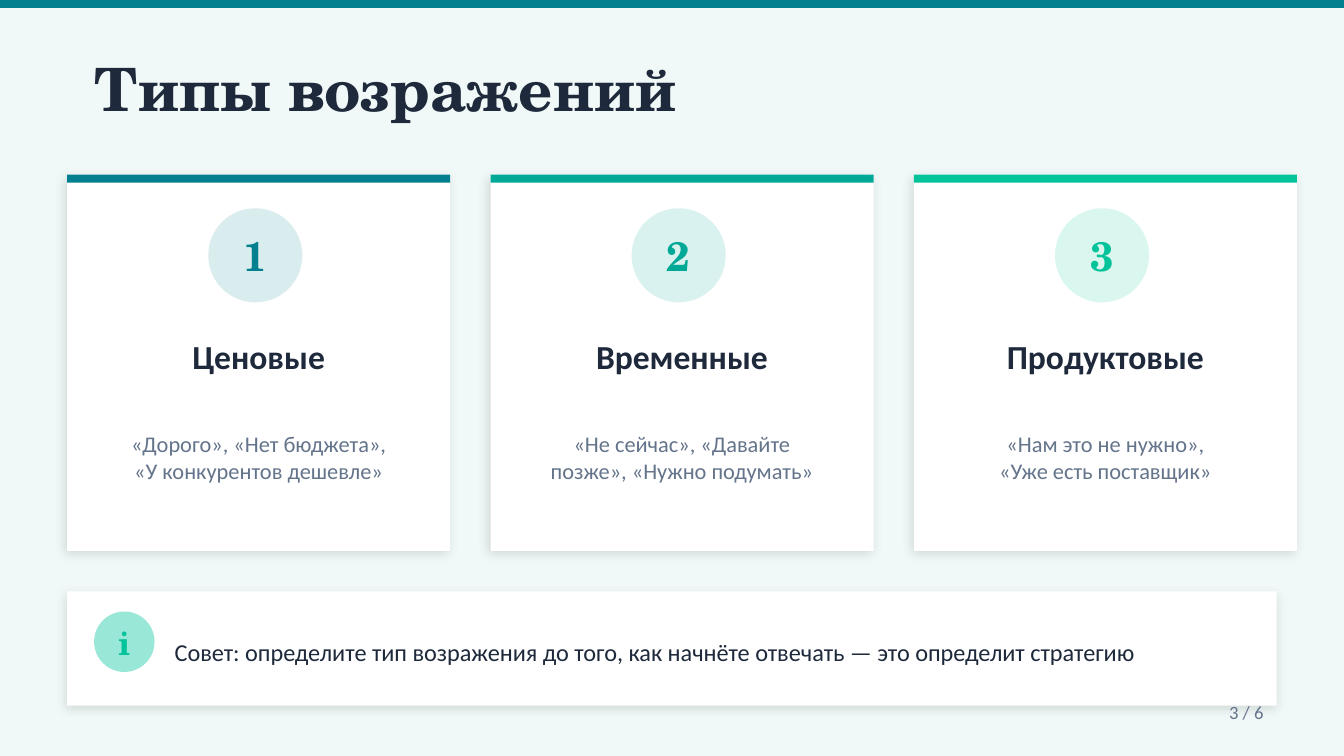
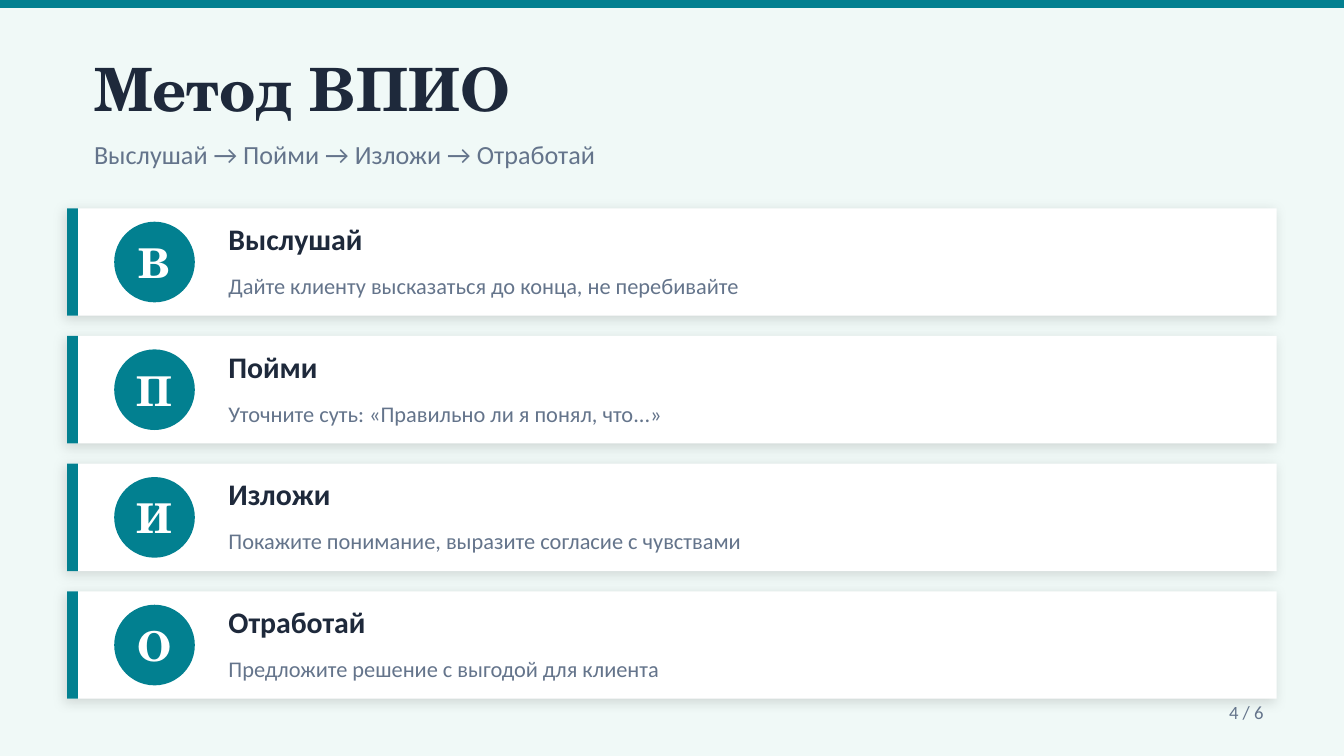
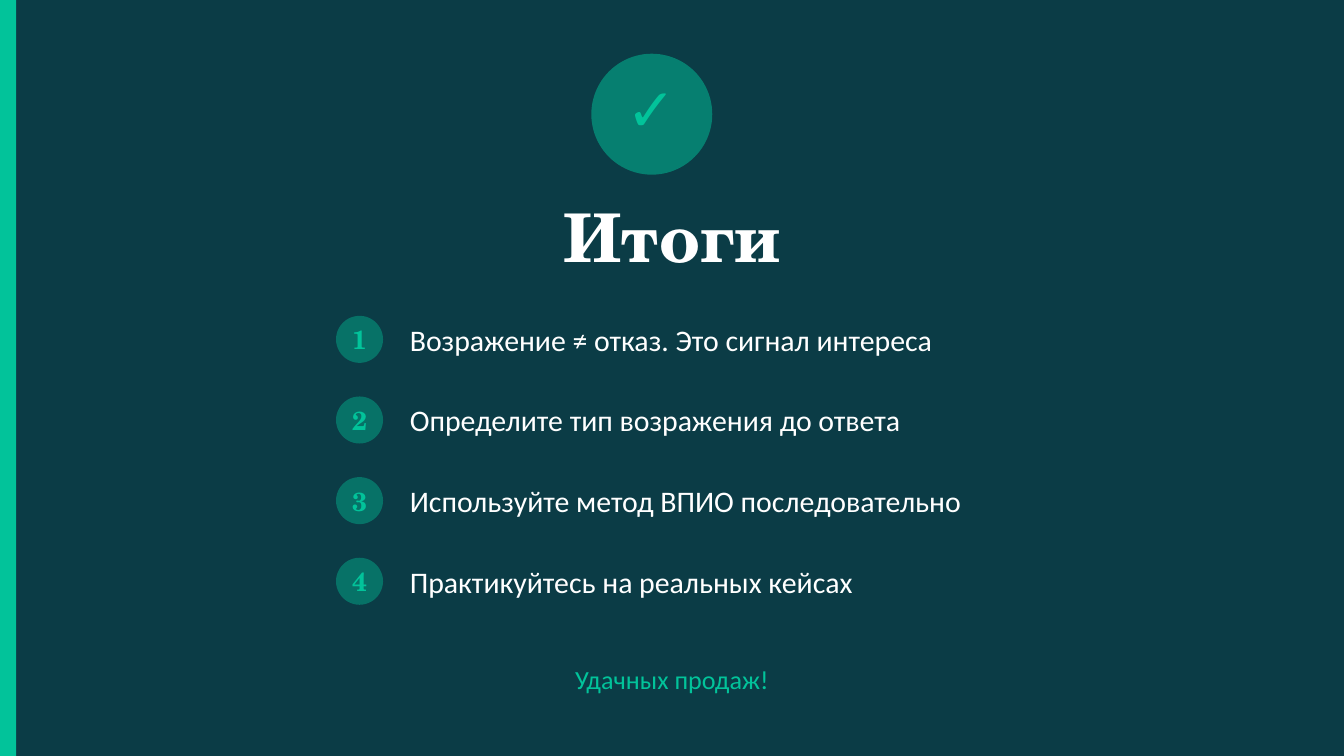
import pptx
import pptx.dml.color
import pptx.enum.shapes
import pptx.enum.text
import pptx.oxml
import pptx.oxml.ns
import pptx.util

RGBColor = pptx.dml.color.RGBColor
Kind = pptx.enum.shapes.MSO_SHAPE
Align = pptx.enum.text.PP_ALIGN
Inches = pptx.util.Inches

# Content
TOTAL_PAGES = 6
TYPES_TITLE = "Типы возражений"
TIP = "Совет: определите тип возражения до того, как начнёте отвечать — это определит стратегию"
METHOD_TITLE = "Метод ВПИО"
METHOD_SUBTITLE = "Выслушай → Пойми → Изложи → Отработай"
METHOD_STEPS = [
    ("Выслушай", "Дайте клиенту высказаться до конца, не перебивайте"),
    ("Пойми", "Уточните суть: «Правильно ли я понял, что...»"),
    ("Изложи", "Покажите понимание, выразите согласие с чувствами"),
    ("Отработай", "Предложите решение с выгодой для клиента"),
]
SUMMARY_TITLE = "Итоги"
SUMMARY_POINTS = [
    "Возражение ≠ отказ. Это сигнал интереса",
    "Определите тип возражения до ответа",
    "Используйте метод ВПИО последовательно",
    "Практикуйтесь на реальных кейсах",
]
FAREWELL = "Удачных продаж!"

# Shared style
TEAL = RGBColor(0x02, 0x80, 0x90)
SEA = RGBColor(0x00, 0xA8, 0x96)
MINT = RGBColor(0x02, 0xC3, 0x9A)
INK = RGBColor(0x1E, 0x29, 0x3B)
SLATE = RGBColor(0x64, 0x74, 0x8B)
WHITE = RGBColor(0xFF, 0xFF, 0xFF)
PALE = RGBColor(0xF0, 0xF9, 0xF7)
NIGHT = RGBColor(0x0F, 0x20, 0x27)
SERIF = "TeX Gyre Schola"
SANS = "Calibri"

OBJECTION_TYPES = [
    ("Ценовые", ["«Дорого», «Нет бюджета»,", "«У конкурентов дешевле»"], TEAL),
    ("Временные", ["«Не сейчас», «Давайте", "позже», «Нужно подумать»"], SEA),
    ("Продуктовые", ["«Нам это не нужно»,", "«Уже есть поставщик»"], MINT),
]

# Layout, in inches
WIDTH = 10
HEIGHT = WIDTH * 9 / 16
MARGIN = 0.5
PAD = 0.2
CONTENT_WIDTH = WIDTH - 2 * MARGIN
BAND = 0.06


def add_text(slide, text, left, top, width, height, *, size, color=INK, font=SANS,
             bold=False, align=None, inset=(0, 0)):
    """Add a vertically centred text box; a list gives one paragraph per item."""
    box = slide.shapes.add_textbox(*map(Inches, (left, top, width, height)))
    frame = box.text_frame
    frame.word_wrap = True
    frame.vertical_anchor = pptx.enum.text.MSO_ANCHOR.MIDDLE
    frame.margin_left = frame.margin_right = Inches(inset[0])
    frame.margin_top = frame.margin_bottom = Inches(inset[1])
    lines = [text] if isinstance(text, str) else text
    for index, line in enumerate(lines):
        paragraph = frame.paragraphs[0] if index == 0 else frame.add_paragraph()
        paragraph.alignment = align
        run = paragraph.add_run()
        run.text = line
        run.font.size = pptx.util.Pt(size)
        run.font.name = font
        run.font.bold = bold
        run.font.color.rgb = color


def add_block(slide, left, top, width, height, color, kind=Kind.RECTANGLE, opacity=100):
    block = slide.shapes.add_shape(kind, *map(Inches, (left, top, width, height)))
    block.shadow.inherit = False
    block.line.fill.background()
    block.fill.solid()
    block.fill.fore_color.rgb = color
    if opacity < 100:
        solid = block._element.spPr.find(pptx.oxml.ns.qn("a:solidFill"))
        solid[0].append(pptx.oxml.parse_xml(
            f'<a:alpha {pptx.oxml.ns.nsdecls("a")} val="{opacity * 1000}"/>'))
    return block


def add_card(slide, left, top, width, height):
    """Add a white panel with a soft shadow."""
    card = add_block(slide, left, top, width, height, WHITE)
    effects = card._element.spPr.find(pptx.oxml.ns.qn("a:effectLst"))
    effects.append(pptx.oxml.parse_xml(
        f'<a:outerShdw {pptx.oxml.ns.nsdecls("a")} blurRad="{pptx.util.Pt(6)}" '
        f'dist="{pptx.util.Pt(2)}" dir="{135 * 60000}" algn="bl" rotWithShape="0">'
        '<a:srgbClr val="000000"><a:alpha val="12000"/></a:srgbClr></a:outerShdw>'))


def add_badge(slide, symbol, left, top, diameter, size, fill, color, opacity=100, lift=0):
    """Add a disc with a symbol, raised by lift, in its middle."""
    add_block(slide, left, top, diameter, diameter, fill, Kind.OVAL, opacity)
    add_text(slide, symbol, left, top - lift, diameter, diameter, size=size,
             color=color, font=SERIF, bold=True, align=Align.CENTER)


def new_slide(deck, background):
    slide = deck.slides.add_slide(deck.slide_layouts[6])
    slide.background.fill.solid()
    slide.background.fill.fore_color.rgb = background
    return slide


def new_content_slide(deck, title, title_width):
    slide = new_slide(deck, PALE)
    add_block(slide, 0, 0, WIDTH, BAND, TEAL)
    add_text(slide, title, MARGIN + PAD, 0.3, title_width, 0.7,
             size=32, font=SERIF, bold=True)
    return slide


def add_page_number(slide, page):
    add_text(slide, f"{page} / {TOTAL_PAGES}", WIDTH - MARGIN - 1, 5.15, 1, 0.3,
             size=10, color=SLATE, align=Align.RIGHT, inset=(0.1, 0.05))


def build_types(deck):
    slide = new_content_slide(deck, TYPES_TITLE, 8)
    top, width, height, gap, disc = 1.3, 2.85, 2.8, 0.3, 0.7
    for index, (name, examples, accent) in enumerate(OBJECTION_TYPES):
        left = MARGIN + index * (width + gap)
        text_left, text_width = left + PAD, width - 2 * PAD
        add_card(slide, left, top, width, height)
        add_block(slide, left, top, width, BAND, accent)
        add_badge(slide, str(index + 1), left + 1.05, top + 0.25, disc, 22,
                  accent, accent, opacity=15)
        add_text(slide, name, text_left, top + 1.1, text_width, 0.5,
                 size=18, bold=True, align=Align.CENTER)
        add_text(slide, examples, text_left, top + 1.6, text_width, 1,
                 size=12, color=SLATE, align=Align.CENTER)

    tip_top = top + height + gap
    add_card(slide, MARGIN, tip_top, CONTENT_WIDTH, 0.85)
    add_badge(slide, "i", MARGIN + PAD, tip_top + 0.15, 0.45, 18, MINT, MINT, opacity=40)
    add_text(slide, TIP, MARGIN + 0.8, tip_top + 0.05, 7.8, 0.8, size=13)
    add_page_number(slide, 3)


def build_method(deck):
    slide = new_content_slide(deck, METHOD_TITLE, 5)
    add_text(slide, METHOD_SUBTITLE, MARGIN + PAD, 0.95, 8, 0.4, size=14, color=SLATE)
    first_top, height, gap, line_height = 1.55, 0.8, 0.15, 0.35
    text_left = MARGIN + 1.2
    for index, (step, advice) in enumerate(METHOD_STEPS):
        top = first_top + index * (height + gap)
        add_card(slide, MARGIN, top, CONTENT_WIDTH, height)
        add_block(slide, MARGIN, top, 0.08, height, TEAL)
        add_badge(slide, step[0], MARGIN + 0.35, top + 0.1, 0.6, 22, TEAL, WHITE)
        add_text(slide, step, text_left, top + 0.05, 3, line_height, size=16, bold=True)
        add_text(slide, advice, text_left, top + 0.05 + line_height, 7.5, line_height,
                 size=12, color=SLATE)
    add_page_number(slide, 4)


def build_summary(deck):
    slide = new_slide(deck, NIGHT)
    add_block(slide, 0, 0, WIDTH, HEIGHT, TEAL, opacity=30)
    add_block(slide, 0, 0, 0.12, HEIGHT, MINT)
    add_badge(slide, "✓", 4.4, 0.4, 0.9, 32, MINT, MINT, opacity=50, lift=0.05)
    add_text(slide, SUMMARY_TITLE, 1, 1.4, WIDTH - 2, 0.7, size=36, color=WHITE,
             font=SERIF, bold=True, align=Align.CENTER)
    for index, point in enumerate(SUMMARY_POINTS):
        top = 2.3 + index * 0.6
        add_badge(slide, str(index + 1), WIDTH / 4, top + 0.05, 0.35, 14,
                  MINT, MINT, opacity=40)
        add_text(slide, point, WIDTH / 4 + 0.55, top, 5, 0.45, size=16, color=WHITE)
    add_text(slide, FAREWELL, 2, 4.8, WIDTH - 4, 0.5, size=14, color=MINT,
             align=Align.CENTER)


def main():
    deck = pptx.Presentation()
    deck.slide_width = Inches(WIDTH)
    deck.slide_height = Inches(HEIGHT)
    build_types(deck)
    build_method(deck)
    build_summary(deck)
    deck.save("out.pptx")


if __name__ == "__main__":
    main()
